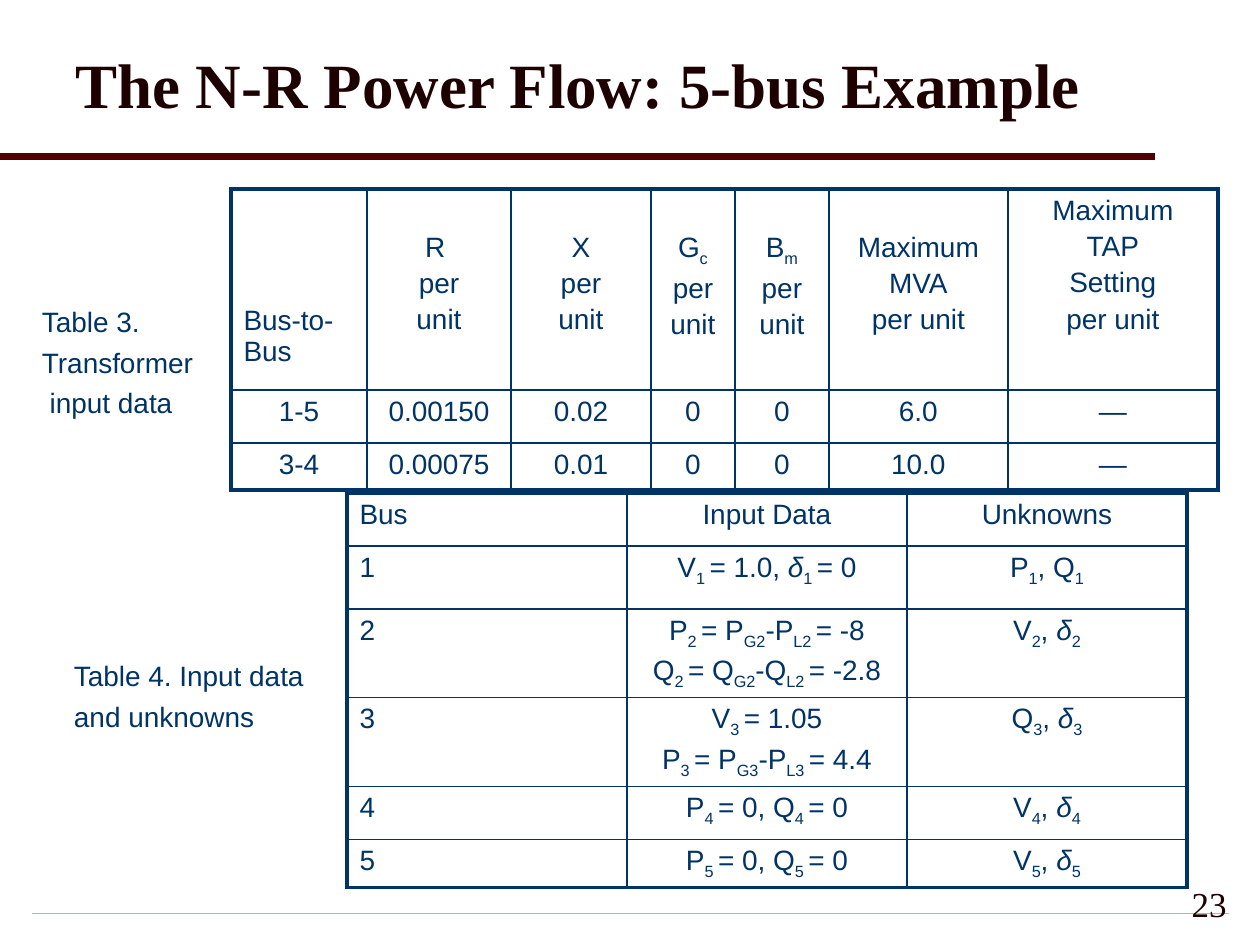
"""Builds the slide with transformer data and bus unknowns of the 5-bus power flow example."""
from lxml.etree import SubElement, fromstring
from pptx import Presentation
from pptx.dml.color import RGBColor
from pptx.enum.shapes import MSO_CONNECTOR, MSO_SHAPE
from pptx.enum.text import MSO_ANCHOR, MSO_AUTO_SIZE, PP_ALIGN
from pptx.oxml.ns import nsdecls, qn
from pptx.util import Pt

PX = 7257
NAVY, DARK, MAROON = "003366", "1E0000", "500000"
THICK, THIN = Pt(2.25), Pt(1)
color = RGBColor.from_string


def write(frame, text, font="Arial", size=16, ink=NAVY, bold=None, align=PP_ALIGN.LEFT, gap=3):
    """Fill a frame line by line; underscores enclose subscripts and δ is italic."""
    for row, line in enumerate(text.split("\n")):
        para = frame.paragraphs[0] if row == 0 else frame.add_paragraph()
        para.alignment = align
        para.space_before = Pt(gap if row else 0)
        for index, piece in enumerate(line.split("_")):
            for part in filter(None, piece.partition("δ")):
                span = para.add_run()
                span.text = part
                span.font.name, span.font.size, span.font.bold = font, Pt(size), bold
                span.font.color.rgb = color(ink)
                if part == "δ":
                    span.font.italic = True
                if index % 2:
                    span.font._element.set("baseline", "-25000")


def add_border(cell, side, width):
    """Draw one side of a table cell."""
    line = SubElement(cell._tc.get_or_add_tcPr(), qn(f"a:ln{side}"), w=str(width))
    fill = SubElement(line, qn("a:solidFill"))
    SubElement(fill, qn("a:srgbClr"), val=NAVY)


deck = Presentation()
deck.slide_width, deck.slide_height = 1260 * PX, 945 * PX
page = deck.slides.add_slide(deck.slide_layouts[6])

footer_bar = page.shapes.add_shape(MSO_SHAPE.RECTANGLE, 32 * PX, 913 * PX, 1197 * PX, 1 * PX)
footer_bar.shadow.inherit = False
footer_bar.line.fill.background()
footer_bar.fill.gradient()
for stop, shade in zip(footer_bar.fill.gradient_stops, ("CC99FF", "F3EBFF")):
    stop.color.rgb = color(shade)
linear = footer_bar._element.spPr.find(".//" + qn("a:lin"))
linear.getparent().replace(linear, fromstring(
    f'<a:path {nsdecls("a")} path="shape">'
    '<a:fillToRect l="50000" t="50000" r="50000" b="50000"/></a:path>'))

title_rule = page.shapes.add_connector(MSO_CONNECTOR.STRAIGHT, 0, 157 * PX, 1155 * PX, 157 * PX)
title_rule.line.color.rgb = color(MAROON)
title_rule.line.width = Pt(4)
SubElement(title_rule._element.spPr, qn("a:effectLst"))

transformers = [
    ["Bus-to-Bus", "R \nper\nunit", "X\nper\nunit", "G_c_\nper\nunit", "B_m_\nper\nunit",
     "Maximum\nMVA\nper unit", "Maximum\nTAP\nSetting\nper unit"],
    ["1-5", "0.00150", "0.02", "0", "0", "6.0", "—"],
    ["3-4", "0.00075", "0.01", "0", "0", "10.0", "—"],
]
unknowns = [
    ["Bus", "Input Data", "Unknowns"],
    ["1", "V_1 _= 1.0, δ_1 _= 0", "P_1_, Q_1_"],
    ["2", "P_2 _= P_G2_-P_L2 _= -8\nQ_2 _= Q_G2_-Q_L2 _= -2.8", "V_2_, δ_2_"],
    ["3", "V_3 _= 1.05\nP_3 _= P_G3_-P_L3 _= 4.4", "Q_3_, δ_3_"],
    ["4", "P_4 _= 0, Q_4 _= 0", "V_4_, δ_4_"],
    ["5", "P_5 _= 0, Q_5 _= 0", "V_5_, δ_5_"],
]
tables = [
    (231, 189, [136, 144, 140, 84, 94, 179, 210], [201, 53, 47], transformers,
     [116, 43, 43, 43, 43, 43, 6]),
    (347, 493, [280] * 3, [53, 63, 87, 87, 53, 47], unknowns, [6] * 3),
]
for left, top, widths, heights, content, header_margins in tables:
    grid = page.shapes.add_table(len(heights), len(widths), left * PX, top * PX,
                                 sum(widths) * PX, sum(heights) * PX).table
    grid.first_row = grid.horz_banding = False
    for column, width in zip(grid.columns, widths):
        column.width = width * PX
    last_row, last_column = len(heights) - 1, len(widths) - 1
    for r, (height, texts) in enumerate(zip(heights, content)):
        grid.rows[r].height = height * PX
        for c, text in enumerate(texts):
            cell = grid.cell(r, c)
            cell.margin_top = (6 if r else header_margins[c]) * PX
            edges = {"L": c == 0, "R": c == last_column, "T": r == 0, "B": r == last_row}
            for side, outer in edges.items():
                add_border(cell, side, THICK if outer else THIN)
            cell.fill.background()
            is_left = c == 0 and (r == 0 or content is unknowns)
            write(cell.text_frame, text, align=PP_ALIGN.LEFT if is_left else PP_ALIGN.CENTER)

captions = [
    (42, 305, 152, 101, "Table 3.\nTransformer\n input data"),
    (74, 659, 242, 67, "Table 4. Input data\nand unknowns"),
]
for left, top, width, height, text in captions:
    frame = page.shapes.add_textbox(left * PX, top * PX, width * PX, height * PX).text_frame
    frame.margin_left = frame.margin_top = frame.margin_right = frame.margin_bottom = 0
    frame.word_wrap = False
    frame.auto_size = MSO_AUTO_SIZE.SHAPE_TO_FIT_TEXT
    write(frame, text, gap=3.8)

headings = [
    (63, 10, 1134, 147, "The N-R Power Flow: 5-bus Example", 36, True, PP_ALIGN.LEFT),
    (977, 872, 262, 63, "23", 20, None, PP_ALIGN.RIGHT),
]
for left, top, width, height, text, size, bold, align in headings:
    frame = page.shapes.add_textbox(left * PX, top * PX, width * PX, height * PX).text_frame
    frame.word_wrap = True
    frame.vertical_anchor = MSO_ANCHOR.MIDDLE
    write(frame, text, font="Times New Roman", size=size, ink=DARK, bold=bold, align=align)

deck.save("out.pptx")
